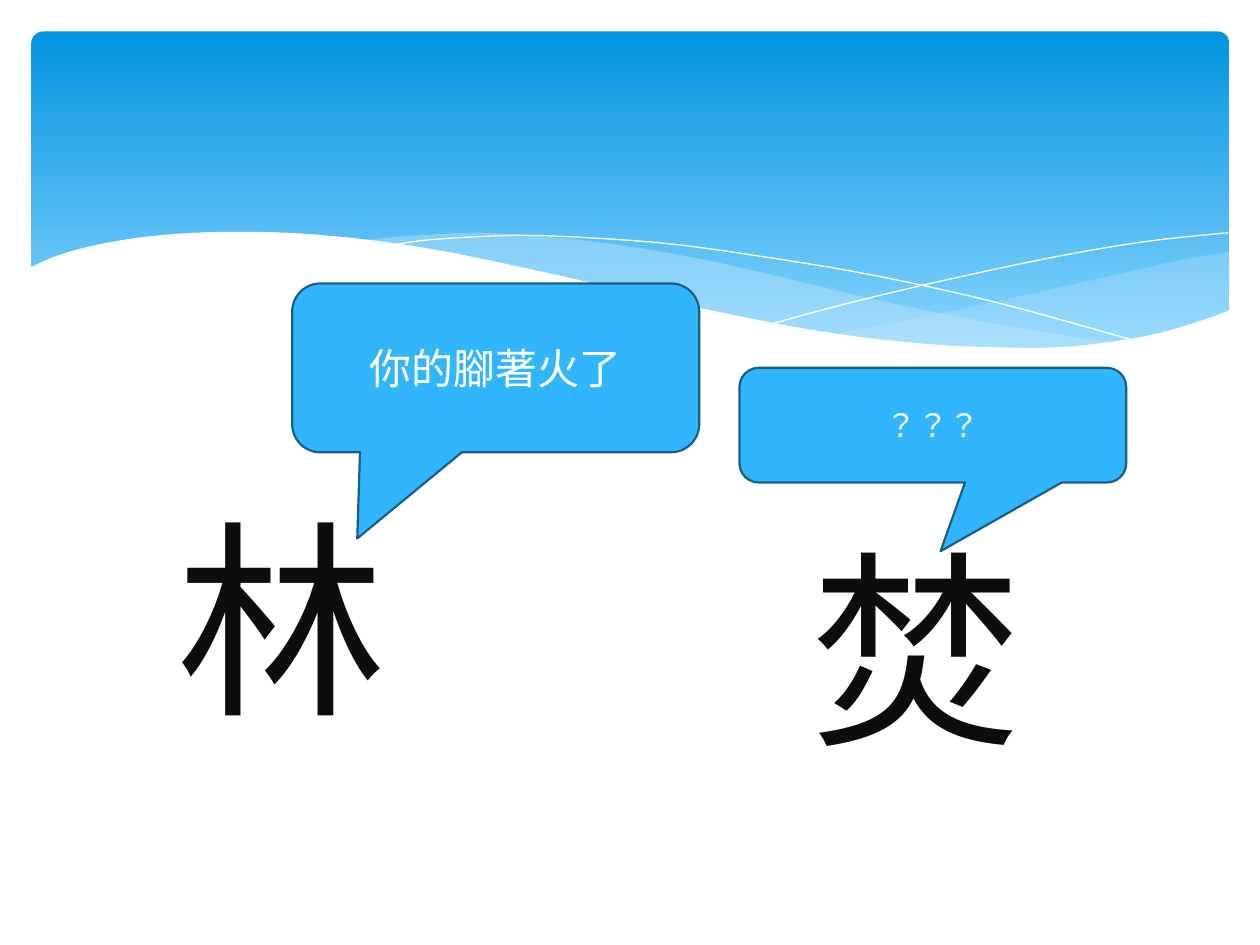
from dataclasses import dataclass

from lxml import etree
from pptx import Presentation
from pptx.dml.color import RGBColor
from pptx.enum.shapes import MSO_SHAPE
from pptx.enum.text import MSO_ANCHOR, PP_ALIGN
from pptx.oxml.ns import qn
from pptx.util import Pt

ROUND = MSO_SHAPE.ROUNDED_RECTANGLE
BUBBLE = MSO_SHAPE.ROUNDED_RECTANGULAR_CALLOUT
MIDDLE, TOP = MSO_ANCHOR.MIDDLE, MSO_ANCHOR.TOP
CENTER, LEFT = PP_ALIGN.CENTER, PP_ALIGN.LEFT


@dataclass(frozen=True)
class Theme:
    white: str = "FFFFFF"
    ink: str = "0D0D0D"
    deep: str = "0293E0"
    pale: str = "83D3FE"
    haze: str = "C6E7FC"
    sky: str = "31B6FD"
    edge: str = "195F84"
    glyph: int = 120
    talk: int = 24
    small: int = 18
    latin: str = "Calibri"
    kanji: str = "Noto Sans CJK JP"
    hanzi: str = "Noto Sans CJK TC"


THEME = Theme()

SWEEP = [(-1, 135), (15, 128), (37, 122), (68, 117), (109, 114.5), (162, 116),
         (227, 124), (304, 140), (382, 158), (449, 171), (505, 178), (553, 180.5),
         (594, 180), (637, 174), (666, 166), (685.5, 159)]
RIGHT_TOP = [(684.5, 126), (655, 131), (602, 143), (543, 156), (490, 167), (458, 173)]
RIGHT_LOW = [(458, 173), (490, 177), (527, 181), (568, 182), (603, 180), (634, 176),
             (660, 168.5), (684.5, 160)]
LEFT_TOP = [(625, 178.5), (585, 173), (540, 165), (490, 155), (435, 142), (392, 132),
            (352, 124.5), (317, 119.5), (284, 116.5), (256, 115), (230, 116),
            (207, 117.5), (188, 119.5)]
LEFT_LOW = [(188, 119.5), (228, 125), (273, 134), (305, 142), (364, 155), (415, 166),
            (461, 173.5), (502, 179), (539, 181.5), (571, 182), (599, 181.5),
            (625, 178.5)]
FALL = [(204.5, 122.5), (223, 119.5), (251, 117.5), (281.5, 116.5), (320, 118),
        (366, 121.5), (420, 129), (482, 139.5), (554, 155.5), (635, 178)]
RISE = [(423.5, 167), (466, 155.5), (520.5, 142.5), (584, 129), (637, 120), (684, 115)]


def rgb(tone):
    return RGBColor.from_string(tone)


def write(shape, text, *, size, font, tone, align=LEFT, anchor=TOP, space=1.0):
    frame = shape.text_frame
    frame.word_wrap = True
    frame.vertical_anchor = anchor
    para = frame.paragraphs[0]
    para.alignment = align
    para.line_spacing = space
    run = para.add_run()
    run.text = text
    run.font.size = Pt(size)
    run.font.name = font
    run.font.color.rgb = rgb(tone)
    etree.SubElement(run.font._element, qn("a:ea"), typeface=font)


def smooth(points, steps=5):
    padded = [points[0], *points, points[-1]]
    curve = [points[0]]
    for a, b, c, d in zip(padded, padded[1:], padded[2:], padded[3:]):
        for step in range(1, steps + 1):
            t = step / steps
            curve.append(tuple(
                (2 * q + (r - p) * t + (2 * p - 5 * q + 4 * r - s) * t ** 2
                 + (3 * q - p - 3 * r + s) * t ** 3) / 2
                for p, q, r, s in zip(a, b, c, d)))
    return curve


def trace(slide, box, points, close):
    spots = [(Pt(box[0] + x), Pt(box[1] + y)) for x, y in points]
    pen = slide.shapes.build_freeform(*spots[0])
    pen.add_line_segments(spots[1:], close=close)
    shape = pen.convert_to_shape()
    shape.shadow.inherit = False
    return shape


def wave(slide, box, points, tone, alpha=100):
    shape = trace(slide, box, points, True)
    shape.fill.solid()
    shape.fill.fore_color.rgb = rgb(tone)
    shape.line.fill.background()
    if alpha < 100:
        color = shape._element.spPr.find(qn("a:solidFill"))[0]
        etree.SubElement(color, qn("a:alpha"), val=str(alpha * 1000))


def strand(slide, box, points):
    shape = trace(slide, box, smooth(points), False)
    shape.fill.background()
    shape.line.color.rgb = rgb(THEME.white)
    shape.line.width = Pt(0)


def header(slide, box):
    panel = slide.shapes.add_shape(ROUND, *map(Pt, box))
    panel.adjustments[0] = 0.034
    panel.shadow.inherit = False
    panel.line.fill.background()
    panel.fill.gradient()
    panel.fill.gradient_angle = 270
    marks = ((0, THEME.deep), (0.9, THEME.pale))
    for stop, (place, tone) in zip(panel.fill.gradient_stops, marks):
        stop.position = place
        stop.color.rgb = rgb(tone)
    wave(slide, box, smooth(RIGHT_TOP) + smooth(RIGHT_LOW), THEME.haze, 29)
    wave(slide, box, smooth(LEFT_TOP) + smooth(LEFT_LOW), THEME.haze, 40)
    strand(slide, box, FALL)
    strand(slide, box, RISE)
    floor = [(685.5, 219), (-1, 219)]
    wave(slide, box, smooth(SWEEP) + floor, THEME.white)


def figure(slide, box, text):
    shape = slide.shapes.add_textbox(*map(Pt, box))
    write(shape, text, size=THEME.glyph, font=THEME.kanji, tone=THEME.ink, space=0.9)


def speech(slide, box, text, tip, size, font):
    shape = slide.shapes.add_shape(BUBBLE, *map(Pt, box))
    for index, value in enumerate((*tip, 0.167)):
        shape.adjustments[index] = value
    shape.shadow.inherit = False
    shape.fill.solid()
    shape.fill.fore_color.rgb = rgb(THEME.sky)
    shape.line.color.rgb = rgb(THEME.edge)
    shape.line.width = Pt(1.25)
    write(shape, text, size=size, font=font, tone=THEME.white,
          align=CENTER, anchor=MIDDLE)


def main():
    deck = Presentation()
    deck.slide_width, deck.slide_height = Pt(720), Pt(540)
    slide = deck.slides.add_slide(deck.slide_layouts[6])
    header(slide, (18, 18, 684.5, 194.5))
    figure(slide, (93.6, 292.3, 142.6, 155.5), "林")
    figure(slide, (456.5, 309.6, 136, 149.8), "焚")
    speech(slide, (167, 162, 232.6, 96.5), "你的腳著火了",
           (-0.34, 1.01), THEME.talk, THEME.latin)
    speech(slide, (422.6, 210.2, 221, 65.5), "？？？",
           (0.02, 1.1), THEME.small, THEME.hanzi)
    deck.save("out.pptx")


if __name__ == "__main__":
    main()
